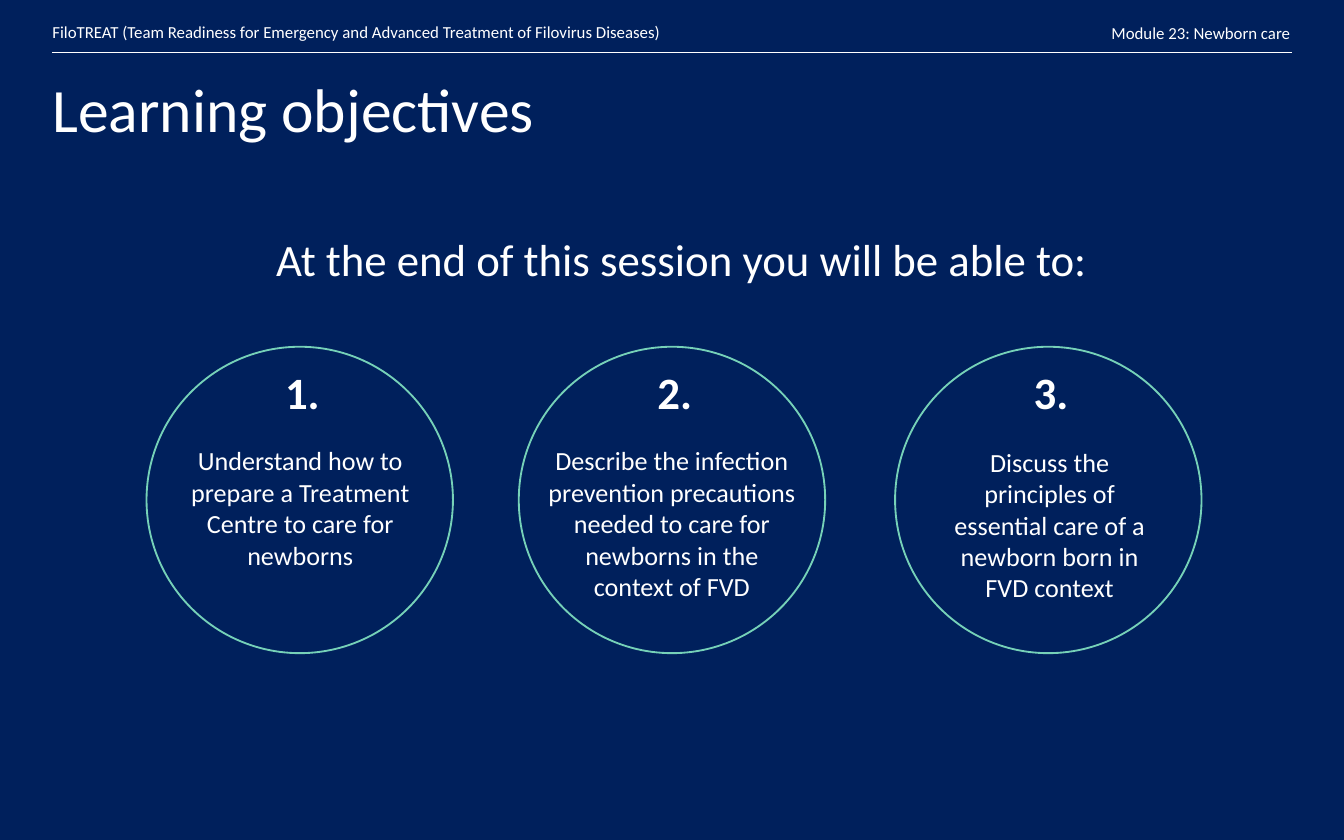
from lxml import etree
from pptx import Presentation
from pptx.dml.color import RGBColor as RGB
from pptx.enum.shapes import MSO_CONNECTOR as Conn, MSO_SHAPE as Shape
from pptx.enum.text import MSO_ANCHOR as Anchor, PP_ALIGN as Align
from pptx.oxml.ns import qn
from pptx.util import Inches, Pt

# Content
COLORS = {"navy": "00205C", "white": "FFFFFF", "mint": "76D1B8"}
FONT = "Calibri"
COURSE = ("FiloTREAT (Team Readiness for Emergency and Advanced "
          "Treatment of Filovirus Diseases)")
MODULE = "Module 23: Newborn care"
TITLE = "Learning objectives"
LEAD = "At the end of this session you will be able to:"
# Circle left, text left, text top, text width, wording
GOALS = [
    (1.09, 1.27, 3.31, 1.93,
     "Understand how to prepare a Treatment Centre to care for newborns"),
    (3.86, 4.05, 3.31, 1.9,
     "Describe the infection prevention precautions needed to care for "
     "newborns in the context of FVD"),
    (6.66, 7, 3.32, 1.62,
     "Discuss the principles of essential care of a newborn born in "
     "FVD context"),
]
EDGE, RULE = 0.39, 0.39
RING, RING_TOP = 2.28, 2.58


def color(name):
    return RGB.from_string(COLORS[name])


def write(box, text, size, align=Align.LEFT, space=1.0, bold=False,
          wrap=True, top=0):
    frame = box.text_frame
    frame.word_wrap = wrap
    frame.vertical_anchor = Anchor.TOP
    frame.margin_left = frame.margin_right = frame.margin_bottom = 0
    frame.margin_top = Inches(top)
    para = frame.paragraphs[0]
    para.alignment = align
    para.line_spacing = space
    para.space_before = Pt(0)
    run = para.add_run()
    run.text = text
    font = run.font
    font.name, font.size, font.bold = FONT, Pt(size), bold
    font.color.rgb = color("white")


def label(place, text, size, **style):
    box = slide.shapes.add_textbox(*map(Inches, place))
    write(box, text, size, **style)


deck = Presentation()
deck.slide_width, deck.slide_height = Inches(10), Inches(6.25)
slide = deck.slides.add_slide(deck.slide_layouts[5])
back = slide.background.fill
back.solid()
back.fore_color.rgb = color("navy")

# Header
rule = slide.shapes.add_connector(
    Conn.STRAIGHT, Inches(EDGE), Inches(RULE), Inches(10 - EDGE), Inches(RULE))
rule.line.color.rgb = color("white")
rule.line.width = Pt(0.5)
etree.SubElement(rule.element.spPr, qn("a:effectLst"))
label((EDGE, 0.16, 6.14, 0.15), COURSE, 9)
label((8.27, 0.17, 1.33, 0.3), MODULE, 9, wrap=False)

# Title and lead-in
title = slide.shapes.title
title.left, title.top = Inches(EDGE), Inches(RULE)
title.width, title.height = Inches(6.21), Inches(1.2)
write(title, TITLE, 33, space=0.9, top=0.2)
label((1.88, 1.77, 6.38, 0.81), LEAD, 24, align=Align.CENTER, space=0.9)

# Numbered goals in circles
for num, (left, text_left, text_top, width, text) in enumerate(GOALS, 1):
    ring = slide.shapes.add_shape(
        Shape.OVAL, *map(Inches, (left, RING_TOP, RING, RING)))
    ring.shadow.inherit = False
    ring.fill.background()
    ring.line.color.rgb = color("mint")
    ring.line.width = Pt(1)
    label((text_left, text_top, width, 0.93), text, 14, align=Align.CENTER)
    label((left - 0.06, 2.76, 2.44, 0.36), f"{num}.", 24,
          align=Align.CENTER, space=0.9, bold=True)

deck.save("out.pptx")
